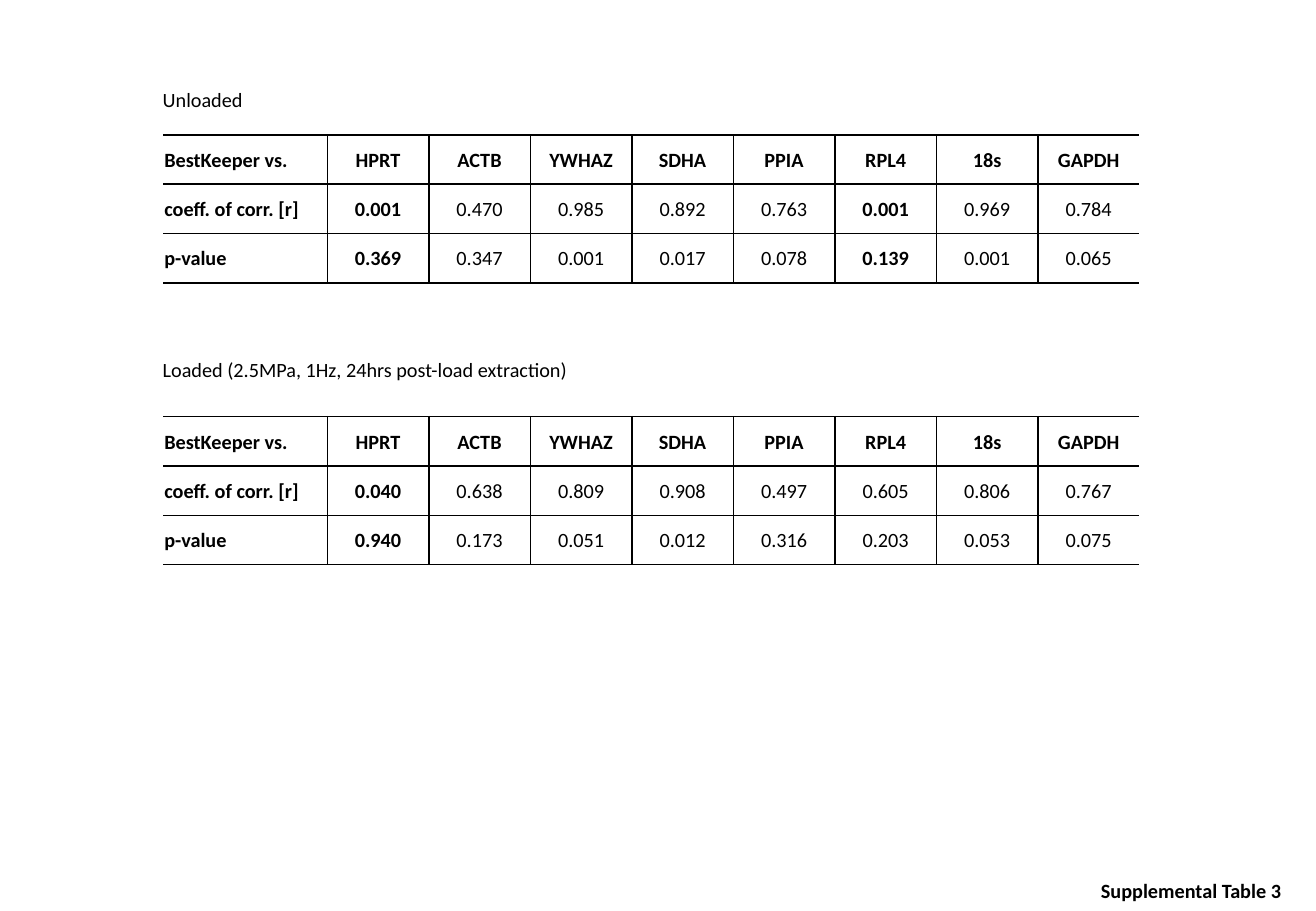
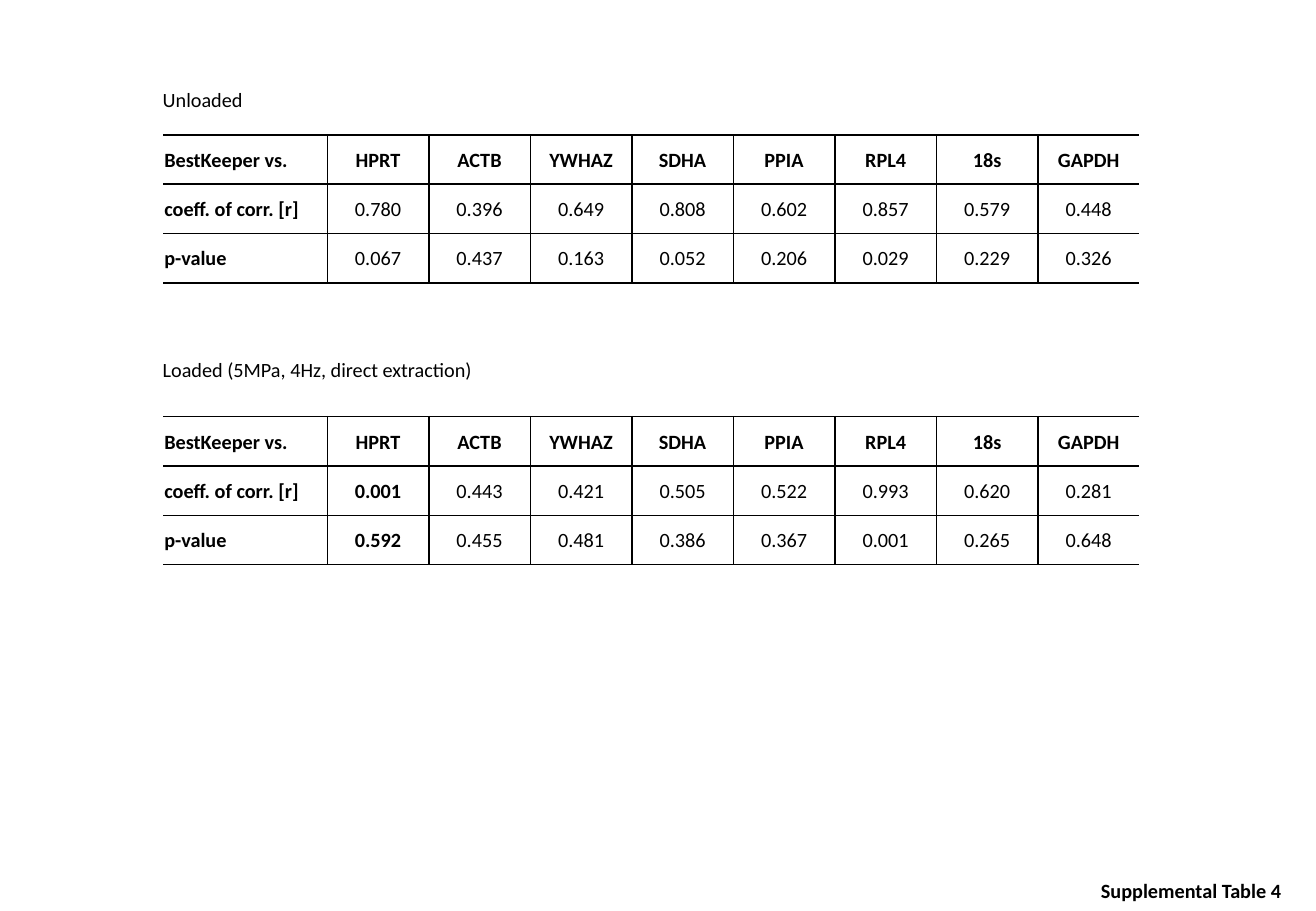
import pptx
import pptx.dml.color
import pptx.enum.text
import pptx.oxml
import pptx.oxml.ns
import pptx.util

Inches, Pt = pptx.util.Inches, pptx.util.Pt
Align, Anchor = pptx.enum.text.PP_ALIGN, pptx.enum.text.MSO_ANCHOR
WIDE, HIGH = 10.83, 7.5
GENES = ["HPRT", "ACTB", "YWHAZ", "SDHA", "PPIA", "RPL4", "18s", "GAPDH"]


def tint(code):
    return pptx.dml.color.RGBColor.from_string(code)


class Deck:
    """Shared style and current slide; lengths are percent of the slide."""
    font, size, ink = "Calibri", 12, "000000"
    left, width, label, row = 12.4, 74.2, 12.47, 5.42

    def __init__(self):
        self.prs = pptx.Presentation()
        self.prs.slide_width, self.prs.slide_height = Inches(WIDE), Inches(HIGH)

    def across(self, share):
        return Inches(WIDE * share / 100)

    def down(self, share):
        return Inches(HIGH * share / 100)

    def words(self, frame, text, bold=False, align=Align.LEFT):
        par = frame.paragraphs[0]
        par.alignment = align
        run = par.add_run()
        run.text = text
        font = run.font
        font.name, font.size, font.bold = self.font, Pt(self.size), bold
        font.color.rgb = tint(self.ink)
        return par

    def line(self, shape, text, bold=False):
        frame = shape.text_frame
        frame.word_wrap = True
        frame.auto_size = pptx.enum.text.MSO_AUTO_SIZE.SHAPE_TO_FIT_TEXT
        frame.vertical_anchor = Anchor.TOP
        self.words(frame, text, bold)

    # The slide's title sits in the bottom right corner
    def page(self, title):
        self.slide = self.prs.slides.add_slide(self.prs.slide_layouts[5])
        head = self.slide.shapes.title
        head.left, head.top = self.across(82.73), self.down(95.73)
        head.width, head.height = self.across(16.9), self.down(4)
        self.line(head, title, True)

    def note(self, top, text):
        box = self.slide.shapes.add_textbox(
            self.across(11.45), self.down(top), self.across(35.5), self.down(4))
        self.line(box, text)

    # Ruled cell: sides outside the given set stay open
    def rule(self, cell, sides):
        props = cell._tc.get_or_add_tcPr()
        for spot, side in enumerate("LRTB"):
            paint = (f'<a:solidFill><a:srgbClr val="{self.ink}"/></a:solidFill>'
                     if side in sides else "<a:noFill/>")
            props.insert(spot, pptx.oxml.parse_xml(
                f'<a:ln{side} {pptx.oxml.ns.nsdecls("a")} w="{Pt(1)}">'
                f'{paint}</a:ln{side}>'))

    def cell(self, cell, text, bold, align, sides):
        cell.fill.background()
        cell.margin_left = cell.margin_right = Inches(0.01)
        cell.margin_top = cell.margin_bottom = Inches(0.01)
        cell.vertical_anchor = Anchor.MIDDLE
        self.words(cell.text_frame, text, bold, align).line_spacing = 1.07
        self.rule(cell, sides)

    def table(self, top, coeff, prob, strong):
        rows = [["BestKeeper vs."] + GENES,
                ["coeff. of corr. [r]"] + coeff.split(),
                ["p-value"] + prob.split()]
        last = len(GENES)
        grid = self.slide.shapes.add_table(
            len(rows), last + 1, self.across(self.left), self.down(top),
            self.across(self.width), self.down(self.row * len(rows))).table
        grid.first_row = grid.horz_banding = False
        for col in range(last + 1):
            share = (self.width - self.label) / last if col else self.label
            grid.columns[col].width = self.across(share)
        for r, row in enumerate(rows):
            grid.rows[r].height = self.down(self.row)
            for c, text in enumerate(row):
                bold = r == 0 or c == 0 or GENES[c - 1] in strong
                sides = "TB" + ("L" if c else "") + ("R" if c < last else "")
                self.cell(grid.cell(r, c), text, bold,
                          Align.CENTER if c else Align.LEFT, sides)


# Each part: caption, coefficients, p-values, genes in bold
PAGES = {
    "Supplemental Table 3": [
        ("Unloaded",
         "0.001 0.470 0.985 0.892 0.763 0.001 0.969 0.784",
         "0.369 0.347 0.001 0.017 0.078 0.139 0.001 0.065",
         ["HPRT", "RPL4"]),
        ("Loaded (2.5MPa, 1Hz, 24hrs post-load extraction)",
         "0.040 0.638 0.809 0.908 0.497 0.605 0.806 0.767",
         "0.940 0.173 0.051 0.012 0.316 0.203 0.053 0.075",
         ["HPRT"]),
    ],
    "Supplemental Table 4": [
        ("Unloaded",
         "0.780 0.396 0.649 0.808 0.602 0.857 0.579 0.448",
         "0.067 0.437 0.163 0.052 0.206 0.029 0.229 0.326",
         []),
        ("Loaded (5MPa, 4Hz, direct extraction)",
         "0.001 0.443 0.421 0.505 0.522 0.993 0.620 0.281",
         "0.592 0.455 0.481 0.386 0.367 0.001 0.265 0.648",
         ["HPRT"]),
    ],
}
TOPS = [(8.93, 14.8), (38.53, 45.73)]  # caption and table of each part


def main():
    deck = Deck()
    for title, parts in PAGES.items():
        deck.page(title)
        for (high, low), (text, *data) in zip(TOPS, parts):
            deck.note(high, text)
            deck.table(low, *data)
    deck.prs.save("out.pptx")


if __name__ == "__main__":
    main()
